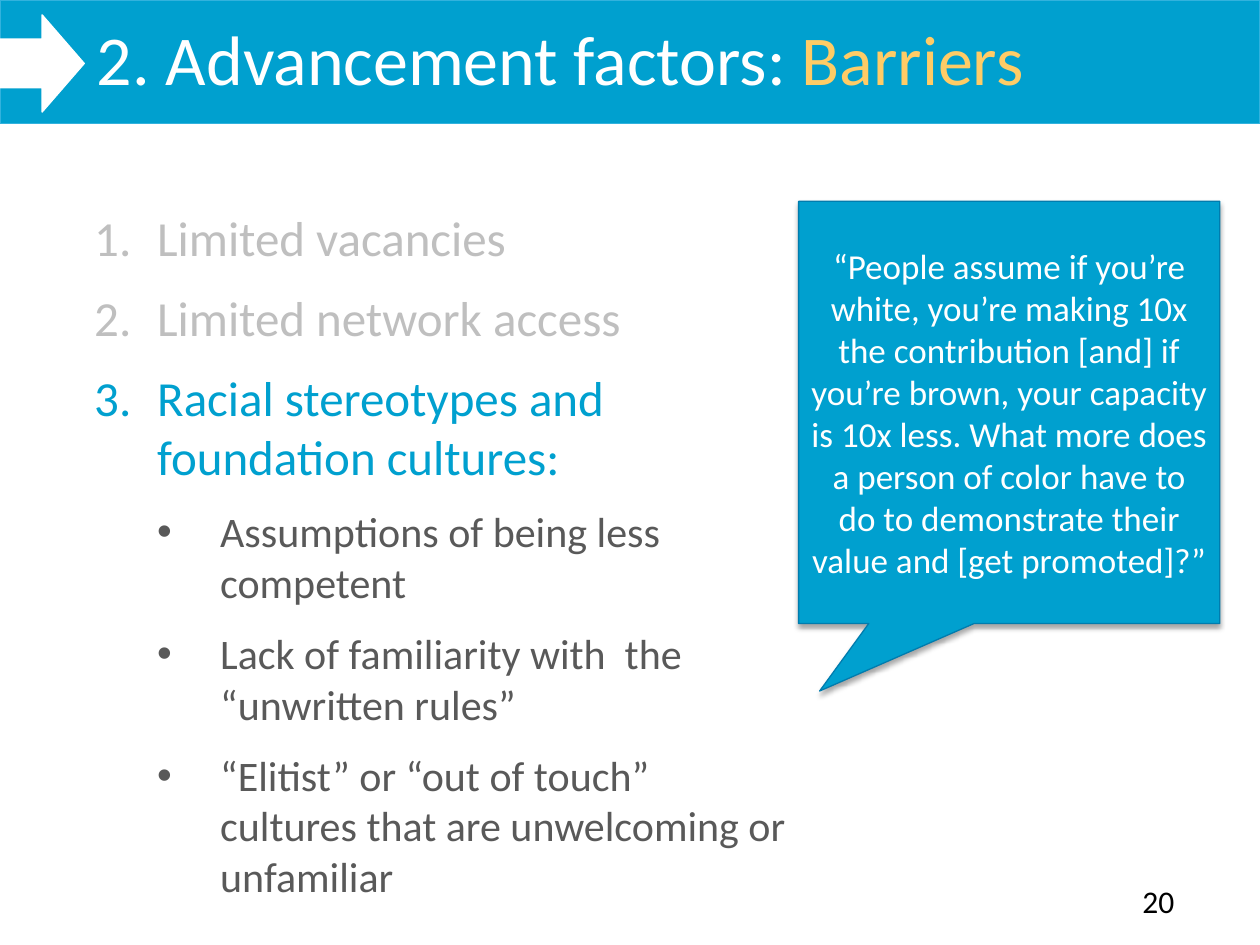
from dataclasses import dataclass

from lxml import etree
from pptx import Presentation
from pptx.dml.color import RGBColor
from pptx.enum.shapes import MSO_SHAPE
from pptx.enum.text import MSO_ANCHOR, MSO_AUTO_SIZE, PP_ALIGN
from pptx.oxml.ns import qn
from pptx.util import Cm, Pt

RECTANGLE, ARROW = MSO_SHAPE.RECTANGLE, MSO_SHAPE.RIGHT_ARROW
CALLOUT = MSO_SHAPE.RECTANGULAR_CALLOUT
TOP, MIDDLE = MSO_ANCHOR.TOP, MSO_ANCHOR.MIDDLE
LEFT, CENTER = PP_ALIGN.LEFT, PP_ALIGN.CENTER
NO_FIT, GROW = MSO_AUTO_SIZE.NONE, MSO_AUTO_SIZE.SHAPE_TO_FIT_TEXT
TITLE_ONLY = 5


@dataclass(frozen=True)
class Theme:
    font: str = "Calibri"
    blue: str = "00A0CF"
    band_edge: str = "32B2DD"
    callout_edge: str = "007CAE"
    white: str = "FFFFFF"
    gold: str = "FFCC66"
    muted: str = "BFBFBF"
    body: str = "595959"
    black: str = "000000"
    title_size: int = 40
    item_size: int = 28
    detail_size: int = 24
    quote_size: int = 20
    number_size: int = 18
    line_width: float = 0.75


THEME = Theme()
INDENT = Cm(1.27)
NUMBERED = [
    ("Limited vacancies", THEME.muted),
    ("Limited network access", THEME.muted),
    ("Racial stereotypes and foundation cultures:", THEME.blue),
]
DETAILS = [
    "Assumptions of being less competent",
    "Lack of familiarity with  the “unwritten rules”",
    "“Elitist” or “out of touch” cultures that are unwelcoming or unfamiliar",
]
QUOTE = (
    "“People assume if you’re white, you’re making 10x the contribution [and] if "
    "you’re brown, your capacity is 10x less. What more does a person of color "
    "have to do to demonstrate their value and [get promoted]?”"
)


def set_format(target, values):
    for name, value in values.items():
        setattr(target, name, value)


def add_run(paragraph, text, size, color):
    run = paragraph.add_run()
    run.text = text
    set_format(run.font, {"name": THEME.font, "size": Pt(size)})
    run.font.color.rgb = RGBColor.from_string(color)


def add_block(slide, kind, box, fill, edge):
    shape = slide.shapes.add_shape(kind, *box)
    shape.shadow.inherit = False
    shape.fill.solid()
    shape.fill.fore_color.rgb = RGBColor.from_string(fill)
    shape.line.color.rgb = RGBColor.from_string(edge)
    shape.line.width = Pt(THEME.line_width)
    return shape


def add_soft_shadow(shape):
    effects = shape._element.spPr.find(qn("a:effectLst"))
    shadow = etree.SubElement(effects, qn("a:outerShdw"), blurRad=str(Pt(3.1)),
                              dist=str(Pt(1.8)), dir="5400000", rotWithShape="0")
    color = etree.SubElement(shadow, qn("a:srgbClr"), val=THEME.black)
    etree.SubElement(color, qn("a:alpha"), val="35000")


def set_list_style(paragraph, level, marker, **attributes):
    """Give the paragraph a hanging indent and a bullet element."""
    properties = paragraph._p.get_or_add_pPr()
    properties.set("marL", str(INDENT * (level + 1)))
    properties.set("indent", str(-INDENT))
    if marker == "buChar":
        etree.SubElement(properties, qn("a:buFont"), typeface="Arial")
    etree.SubElement(properties, qn(f"a:{marker}"), **attributes)


def add_header(slide, box):
    left, top, width, height = box
    arrow_width, arrow_height = Cm(1.7), Cm(1.96)
    band = add_block(slide, RECTANGLE, box, THEME.blue, THEME.band_edge)
    arrow_box = (left, top + Cm(0.3), arrow_width, arrow_height)
    arrow = add_block(slide, ARROW, arrow_box, THEME.white, THEME.white)

    title = slide.shapes.title
    for block in (band, arrow):
        title._element.addprevious(block._element)
    set_format(title, {"left": left + arrow_width, "top": top + Cm(0.18),
                       "width": width - arrow_width, "height": Cm(3.18)})
    set_format(title.text_frame, {"vertical_anchor": TOP, "word_wrap": True,
                                  "auto_size": NO_FIT})
    paragraph = title.text_frame.paragraphs[0]
    set_list_style(paragraph, 0, "buNone")
    paragraph.alignment = LEFT
    add_run(paragraph, "2. Advancement factors: ", THEME.title_size, THEME.white)
    add_run(paragraph, "Barriers", THEME.title_size, THEME.gold)


def add_barrier_list(slide, box):
    frame = slide.shapes.add_textbox(*box).text_frame
    set_format(frame, {"word_wrap": True, "auto_size": GROW})
    numbered = [(text, 0, THEME.item_size, color) for text, color in NUMBERED]
    details = [(text, 1, THEME.detail_size, THEME.body) for text in DETAILS]
    for index, (text, level, size, color) in enumerate(numbered + details):
        paragraph = frame.add_paragraph() if index else frame.paragraphs[0]
        if level:
            set_list_style(paragraph, level, "buChar", char="•")
        else:
            set_list_style(paragraph, level, "buAutoNum", type="arabicPeriod")
        set_format(paragraph, {"level": level, "space_after": Pt(12)})
        add_run(paragraph, text, size, color)


def add_quote(slide, box):
    callout = add_block(slide, CALLOUT, box, THEME.blue, THEME.callout_edge)
    callout.adjustments[0] = -0.45
    callout.adjustments[1] = 0.66
    add_soft_shadow(callout)
    frame = callout.text_frame
    set_format(frame, {"vertical_anchor": MIDDLE, "word_wrap": True})
    paragraph = frame.paragraphs[0]
    paragraph.alignment = CENTER
    add_run(paragraph, QUOTE, THEME.quote_size, THEME.white)


def add_page_number(slide, box):
    frame = slide.shapes.add_textbox(*box).text_frame
    frame.word_wrap = True
    add_run(frame.paragraphs[0], "20", THEME.number_size, THEME.black)


def main():
    presentation = Presentation()
    set_format(presentation, {"slide_width": Cm(25.4), "slide_height": Cm(19.05)})
    slide = presentation.slides.add_slide(presentation.slide_layouts[TITLE_ONLY])
    content_top = Cm(4.06)
    add_header(slide, (0, 0, presentation.slide_width, Cm(2.49)))
    add_page_number(slide, (Cm(22.78), Cm(17.65), Cm(1.35), Cm(1.02)))
    add_barrier_list(slide, (Cm(1.65), content_top, Cm(14.46), Cm(14.35)))
    add_quote(slide, (Cm(16.1), content_top, Cm(8.49), Cm(8.51)))
    presentation.save("out.pptx")


if __name__ == "__main__":
    main()
